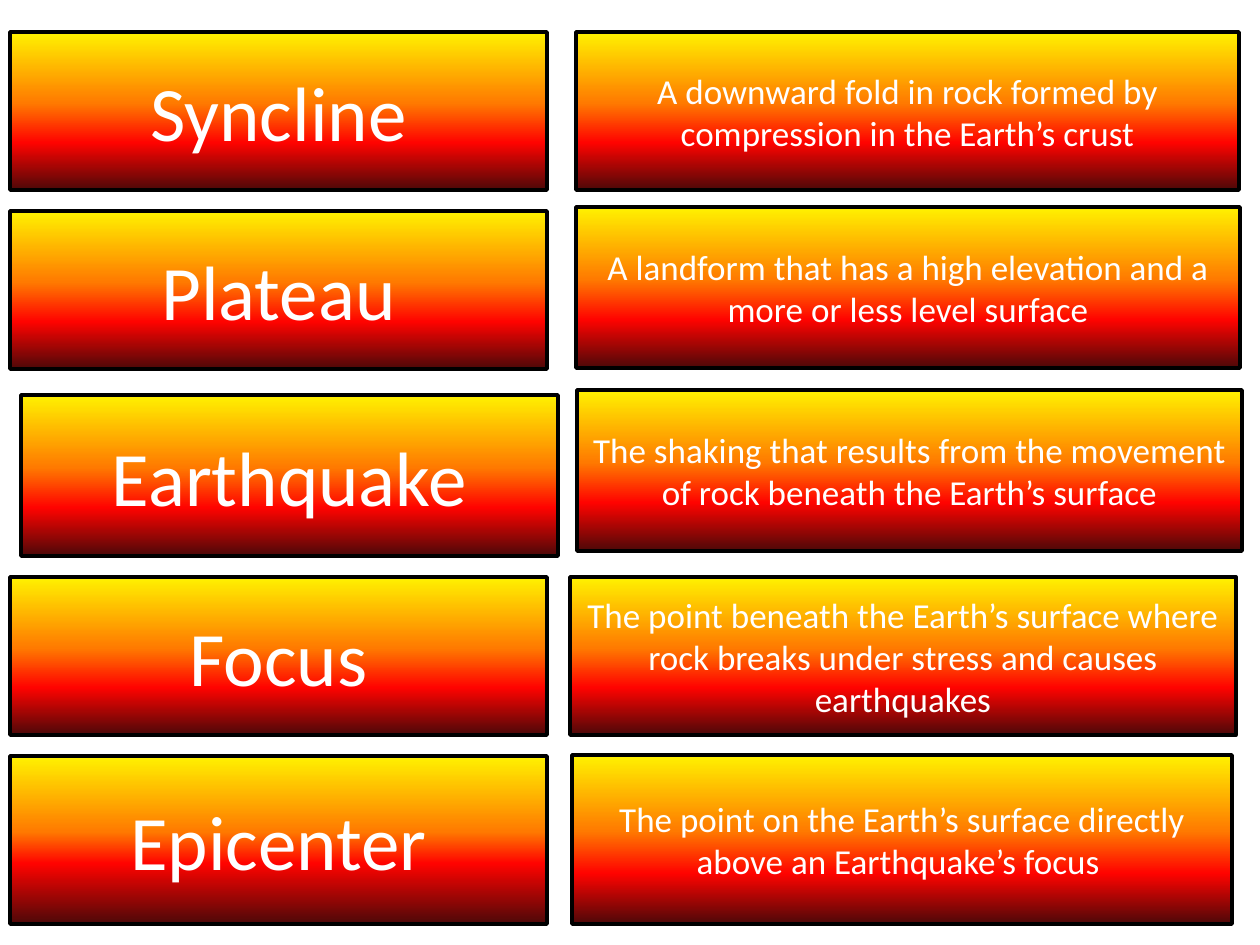
from dataclasses import dataclass

import pptx
import pptx.dml.color
import pptx.enum.shapes
import pptx.enum.text
import pptx.oxml
import pptx.oxml.ns
import pptx.util

SCALE = 914400 / 126  # EMU in one px


@dataclass(frozen=True)
class Theme:
    font: str = "Calibri"
    text: str = "FFFFFF"
    edge: str = "000000"
    fire: tuple[str, ...] = ("FFF200", "FF7A00", "FF0300", "4D0808")
    term: int = 44
    note: int = 20
    line: int = 2


@dataclass(frozen=True)
class Card:
    text: str
    left: int
    top: int
    width: int
    height: int
    red: int = 70  # position of the red stop, in percent


THEME = Theme()
WIDE = 537  # width of every term card

# Vocabulary pairs: term on the left, meaning on the right
PAIRS = [
    (Card("Syncline", 10, 32, WIDE, 158),
     Card("A downward fold in rock formed by compression in the Earth’s crust",
          576, 32, 663, 158)),
    (Card("Plateau", 10, 211, WIDE, 158),
     Card("A landform that has a high elevation and a more or less level surface",
          576, 207, 664, 161)),
    (Card("Earthquake", 21, 395, WIDE, 161),
     Card("The shaking that results from the movement of rock beneath the Earth’s surface",
          577, 390, 665, 161)),
    (Card("Focus", 10, 577, WIDE, 158),
     Card("The point beneath the Earth’s surface where rock breaks under stress "
          "and causes earthquakes", 570, 577, 666, 158)),
    (Card("Epicenter", 10, 756, WIDE, 168, 64),
     Card("The point on the Earth’s surface directly above an Earthquake’s focus ",
          572, 755, 660, 169)),
]


def px(size: int) -> pptx.util.Emu:
    return pptx.util.Emu(round(size * SCALE))


def rgb(code: str) -> pptx.dml.color.RGBColor:
    return pptx.dml.color.RGBColor.from_string(code)


def blend(shape, red: int) -> None:
    """Fill from top to bottom with the four fire colours."""
    shape.fill.gradient()
    shape.fill.gradient_angle = 270
    stops = shape.fill._fill._gradFill.find(pptx.oxml.ns.qn("a:gsLst"))
    for stop in list(stops):
        stops.remove(stop)
    for spot, code in zip((0, 45, red, 100), THEME.fire):
        stops.append(pptx.oxml.parse_xml(
            f'<a:gs {pptx.oxml.ns.nsdecls("a")} pos="{spot * 1000}">'
            f'<a:srgbClr val="{code}"/></a:gs>'))


def draw(slide, card: Card, size: int) -> None:
    shape = slide.shapes.add_shape(
        pptx.enum.shapes.MSO_SHAPE.FLOWCHART_PROCESS,
        px(card.left), px(card.top), px(card.width), px(card.height))
    shape.shadow.inherit = False
    blend(shape, card.red)
    shape.line.color.rgb = rgb(THEME.edge)
    shape.line.width = pptx.util.Pt(THEME.line)

    # Centred label
    frame = shape.text_frame
    frame.word_wrap = True
    frame.vertical_anchor = pptx.enum.text.MSO_ANCHOR.MIDDLE
    para = frame.paragraphs[0]
    para.text = card.text
    para.alignment = pptx.enum.text.PP_ALIGN.CENTER
    para.font.name = THEME.font
    para.font.size = pptx.util.Pt(size)
    para.font.color.rgb = rgb(THEME.text)


def main() -> None:
    deck = pptx.Presentation()
    deck.slide_width, deck.slide_height = px(1260), px(945)
    slide = deck.slides.add_slide(deck.slide_layouts[6])
    for term, note in PAIRS:
        draw(slide, term, THEME.term)
        draw(slide, note, THEME.note)
    deck.save("out.pptx")


if __name__ == "__main__":
    main()
